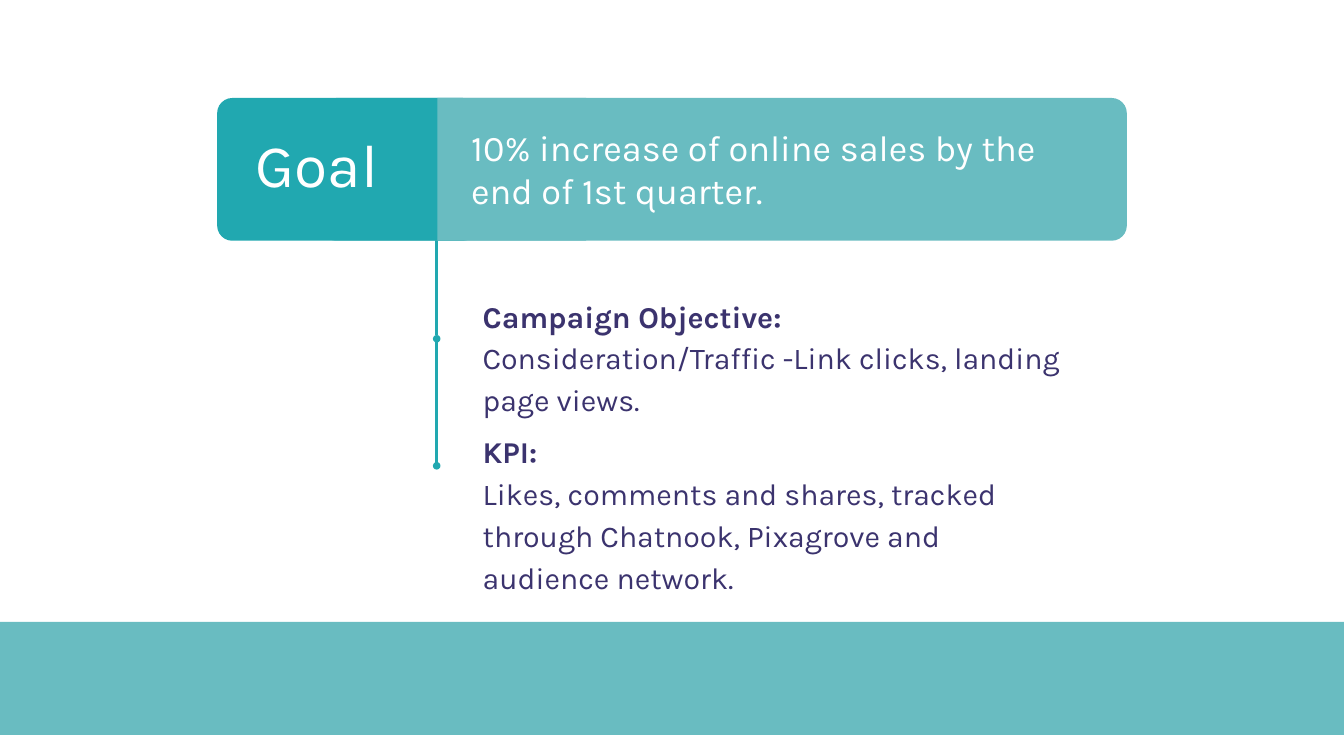
"""Build a campaign goal slide with its objective and KPI."""
from lxml import etree
from pptx import Presentation
from pptx import util as u
from pptx.dml.color import RGBColor
from pptx.enum import shapes, text
from pptx.oxml import ns

TEAL = RGBColor(0x21, 0xA8, 0xB0)
PALE = RGBColor(0x69, 0xBC, 0xC1)
INK = RGBColor(0x3B, 0x33, 0x6E)
WHITE = RGBColor(0xFF, 0xFF, 0xFF)
RECT = shapes.MSO_SHAPE.RECTANGLE
ROUND = shapes.MSO_SHAPE.ROUNDED_RECTANGLE


class Deck:
    """Hold the style and the current slide."""

    def __init__(self, wide, high):
        self.font = "Karla"
        self.prs = Presentation()
        self.prs.slide_width = u.Inches(wide)
        self.prs.slide_height = u.Inches(high)
        self.slide = self.prs.slides.add_slide(self.prs.slide_layouts[3])

    def block(self, kind, box, fill):
        """Draw a filled shape without outline."""
        shape = self.slide.shapes.add_shape(kind, *map(u.Inches, box))
        shape.shadow.inherit = False
        shape.fill.solid()
        shape.fill.fore_color.rgb = fill
        shape.line.fill.background()
        if kind == ROUND:
            shape.adjustments[0] = 0.106

    def stem(self, x, top, end):
        """Draw a vertical line ending in a dot."""
        line = self.slide.shapes.add_connector(
            shapes.MSO_CONNECTOR.STRAIGHT, *map(u.Inches, (x, top, x, end)))
        line.line.color.rgb = TEAL
        line.line.width = u.Pt(3)
        props = line.element.spPr
        etree.SubElement(props.find(ns.qn("a:ln")), ns.qn("a:tailEnd"),
                         type="oval")
        etree.SubElement(props, ns.qn("a:effectLst"))

    def holder(self, idx, *rest):
        """Fill a placeholder and bring it to the front."""
        shape = self.slide.placeholders[idx]
        shape.element.getparent().append(shape.element)
        self.letter(shape, *rest)

    def label(self, *rest):
        """Add a text box."""
        self.letter(self.slide.shapes.add_textbox(0, 0, 0, 0), *rest)

    def letter(self, shape, box, lines, size, color, inset=0.22, gap=1.0):
        """Place a text shape and set its lines of (words, bold)."""
        for name, value in zip(("left", "top", "width", "height"), box):
            setattr(shape, name, u.Inches(value))
        frame = shape.text_frame
        form = {"word_wrap": True, "auto_size": text.MSO_AUTO_SIZE.NONE,
                "vertical_anchor": text.MSO_ANCHOR.MIDDLE}
        for side in ("left", "top", "right", "bottom"):
            form[f"margin_{side}"] = u.Inches(inset)
        for name, value in form.items():
            setattr(frame, name, value)
        frame.text = "\n".join(words for words, bold in lines)
        for para, (words, bold) in zip(frame.paragraphs, lines):
            props = para._p.get_or_add_pPr()
            props.set("marL", "0")
            props.set("indent", "0")
            etree.SubElement(props, ns.qn("a:buNone"))
            para.alignment = text.PP_ALIGN.LEFT
            para.line_spacing = gap
            para.space_before = u.Pt(0)
            style = {"name": self.font, "size": u.Pt(size), "bold": bold}
            for name, value in style.items():
                setattr(para.runs[0].font, name, value)
            para.runs[0].font.color.rgb = color


def main():
    deck = Deck(22.22, 12.15)
    deck.block(RECT, (0, 10.28, 22.22, 1.87), PALE)
    for top, end in ((3.5, 5.6), (5.6, 7.7)):
        deck.stem(7.22, top, end)
    for kind, left, wide, fill in ((ROUND, 5.31, 13.32, PALE),
                                   (ROUND, 3.59, 4.31, TEAL),
                                   (RECT, 7.23, 2.46, PALE)):
        deck.block(kind, (left, 1.62, wide, 2.36), fill)
    deck.holder(0, (4.13, 1.64, 2.62, 2.13), [("Goal", False)],
                72, WHITE, 0.1)
    deck.label((7.57, 1.71, 10.87, 2.16),
               [("10% increase of online sales by the end of 1st quarter.",
                 False)], 43, WHITE)
    notes = (
        (1, (7.76, 5.01, 10.28, 1.72), "Campaign Objective:",
         "Consideration/Traffic -Link clicks, landing page views."),
        (2, (7.76, 7.28, 10.09, 2.36), "KPI:",
         "Likes, comments and shares, tracked through Chatnook, "
         "Pixagrove and audience network."),
    )
    for idx, box, head, body in notes:
        deck.holder(idx, box, [(head, True), (body, False)],
                    36, INK, 0.22, 1.15)
    deck.prs.save("out.pptx")


if __name__ == "__main__":
    main()
